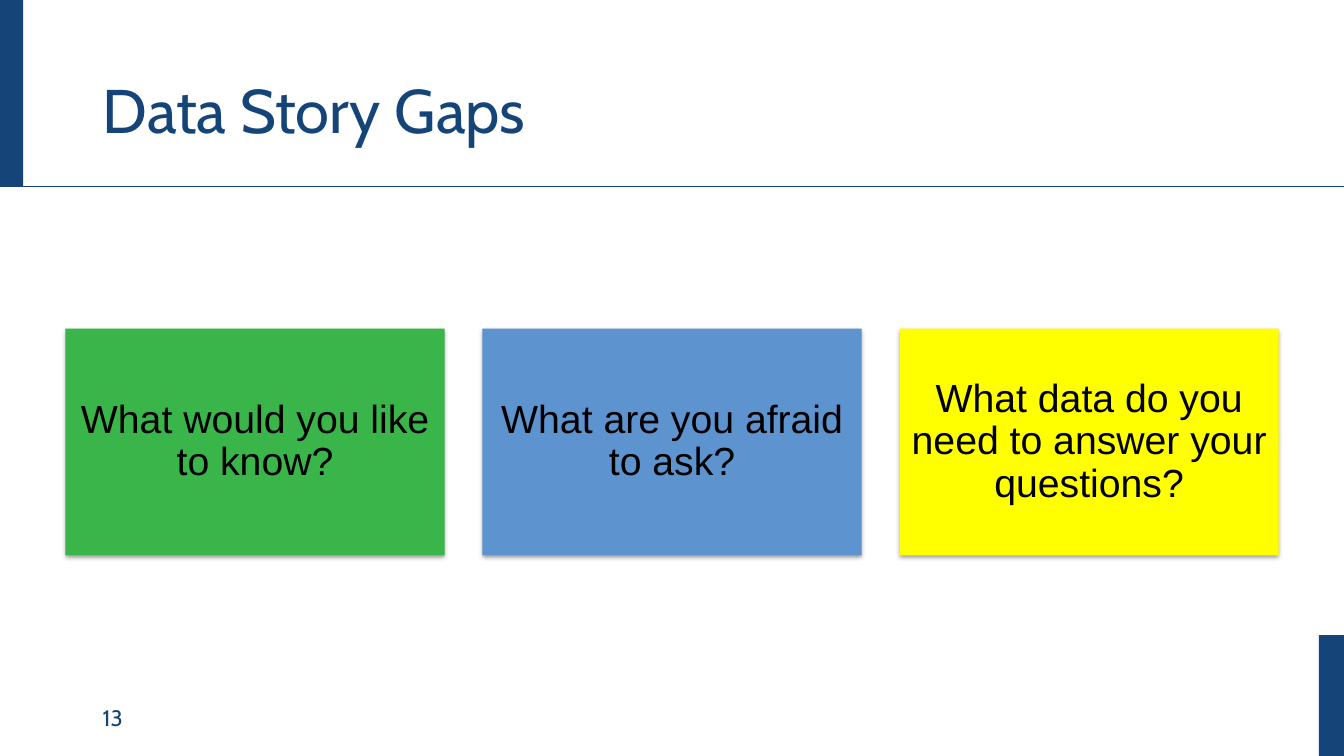
from dataclasses import dataclass

from lxml import etree
from pptx import Presentation
from pptx.dml.color import RGBColor
from pptx.enum import shapes, text
from pptx.oxml import ns
from pptx.util import Inches, Pt

NAVY = RGBColor(0x15, 0x45, 0x78)
GREEN = RGBColor(0x39, 0xB5, 0x4A)
BLUE = RGBColor(0x5D, 0x93, 0xCE)
YELLOW = RGBColor(0xFF, 0xFF, 0x00)
BLACK = RGBColor(0x00, 0x00, 0x00)

WIDTH, HEIGHT = 13.33, 7.5
HEADER_H = 1.85
TEXT_LEFT = 0.92
CARD_LEFT, CARD_TOP = 0.65, 3.26
CARD_W, CARD_H = 3.76, 2.25
CARD_PITCH = 1.1 * CARD_W


@dataclass(frozen=True)
class Box:
    left: float
    top: float
    width: float
    height: float

    def emu(self) -> tuple:
        return tuple(Inches(v) for v in (self.left, self.top, self.width, self.height))


@dataclass(frozen=True)
class Card:
    question: str
    fill: RGBColor


BARS = [
    Box(0, 0, 0.23, HEADER_H),
    Box(WIDTH - 0.25, HEIGHT - 1.2, 0.25, 1.2),
]
CARDS = [
    Card("What would you like to know?", GREEN),
    Card("What are you afraid to ask?", BLUE),
    Card("What data do you need to answer your questions?", YELLOW),
]


def add_rect(slide, box: Box, fill: RGBColor):
    sp = slide.shapes.add_shape(shapes.MSO_SHAPE.RECTANGLE, *box.emu())
    sp.shadow.inherit = False
    sp.fill.solid()
    sp.fill.fore_color.rgb = fill
    sp.line.fill.background()
    return sp


def add_shadow(sp) -> None:
    effects = sp._element.spPr.find(ns.qn("a:effectLst"))
    shadow = etree.SubElement(
        effects, ns.qn("a:outerShdw"), blurRad=str(Pt(3.1)), dist=str(Pt(1.6)),
        dir="5400000", rotWithShape="0")
    color = etree.SubElement(shadow, ns.qn("a:srgbClr"), val=str(BLACK))
    etree.SubElement(color, ns.qn("a:alpha"), val="38000")


def write(sp, words: str, size: int, font: str, color: RGBColor,
          align=text.PP_ALIGN.LEFT, spacing: float = 1.0) -> None:
    tf = sp.text_frame
    tf.word_wrap = True
    tf.auto_size = text.MSO_AUTO_SIZE.NONE
    tf.vertical_anchor = text.MSO_ANCHOR.MIDDLE
    p = tf.paragraphs[0]
    p.alignment = align
    p.line_spacing = spacing
    r = p.add_run()
    r.text = words
    r.font.size = Pt(size)
    r.font.name = font
    r.font.color.rgb = color


def add_rule(slide) -> None:
    y = Inches(HEADER_H)
    rule = slide.shapes.add_connector(
        shapes.MSO_CONNECTOR.STRAIGHT, 0, y, Inches(WIDTH), y)
    rule.line.color.rgb = NAVY
    rule.line.width = Pt(0.75)
    etree.SubElement(rule._element.spPr, ns.qn("a:effectLst"))


def add_card(slide, card: Card, column: int) -> None:
    box = Box(CARD_LEFT + column * CARD_PITCH, CARD_TOP, CARD_W, CARD_H)
    sp = add_rect(slide, box, card.fill)
    add_shadow(sp)
    tf = sp.text_frame
    tf.margin_left = tf.margin_right = tf.margin_top = tf.margin_bottom = Inches(0.12)
    write(sp, card.question, 28, "Arial", BLACK, text.PP_ALIGN.CENTER, 0.9)


def main() -> None:
    prs = Presentation()
    prs.slide_width, prs.slide_height = Inches(WIDTH), Inches(HEIGHT)
    slide = prs.slides.add_slide(prs.slide_layouts[5])

    for bar in BARS:
        add_rect(slide, bar, NAVY)
    add_rule(slide)

    title = slide.shapes.title
    title.left, title.top, title.width, title.height = Box(
        TEXT_LEFT, 0.4, 11.5, 1.45).emu()
    write(title, "Data Story Gaps", 44, "Cabin", NAVY, spacing=0.9)

    number = slide.shapes.add_textbox(*Box(TEXT_LEFT, 6.92, 3, 0.4).emu())
    write(number, "13", 16, "Cabin", NAVY)

    for column, card in enumerate(CARDS):
        add_card(slide, card, column)

    prs.save("out.pptx")


if __name__ == "__main__":
    main()
